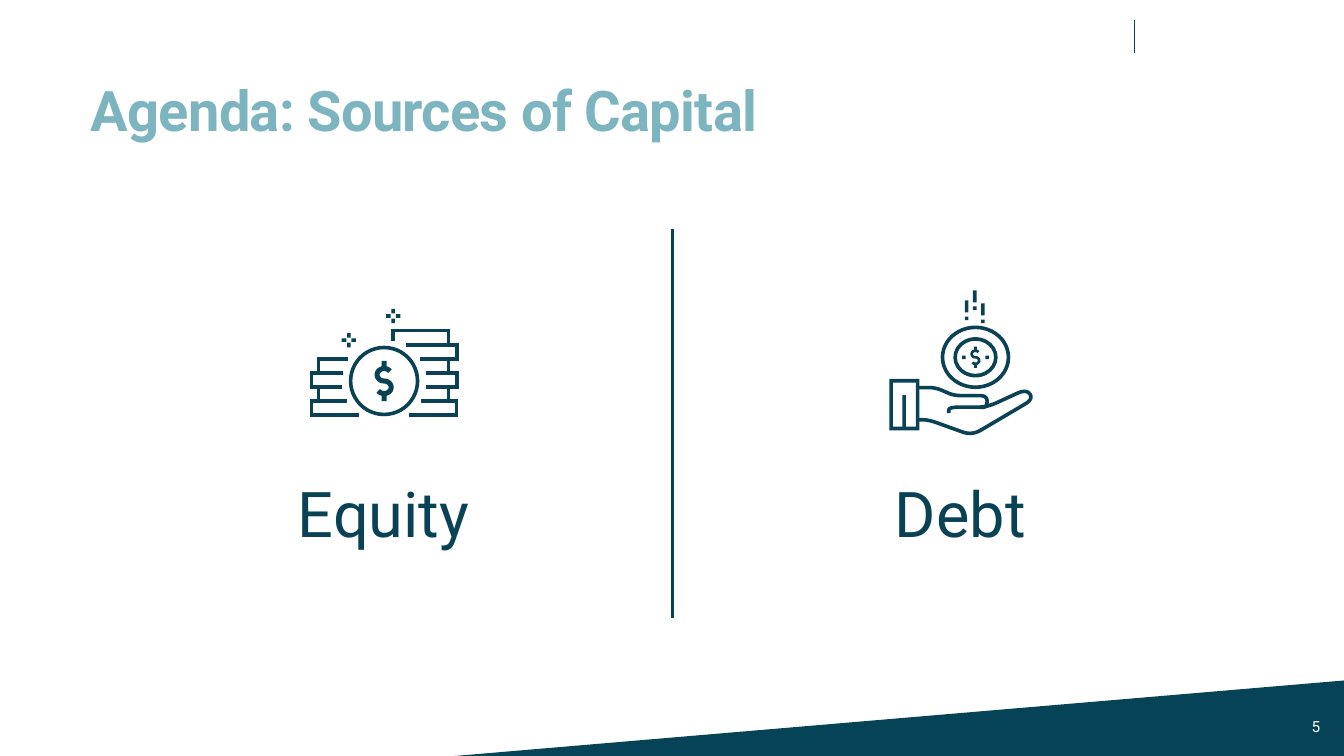
from math import cos, dist, radians, sin, sqrt

from lxml.etree import SubElement
from pptx import Presentation
from pptx.dml.color import RGBColor
from pptx.enum.shapes import MSO_CONNECTOR, MSO_SHAPE
from pptx.enum.text import MSO_ANCHOR, PP_ALIGN
from pptx.oxml.ns import qn
from pptx.util import Inches, Pt

NAVY, INK, TEAL, WHITE = "074356", "094255", "7CB4C0", "FFFFFF"
FONT = "Roboto"
UNIT = 0.01
STROKE = 3.6
CAPTION_HEIGHT = 0.86


def color(value):
    """Turn a hex string into a colour."""
    return RGBColor.from_string(value)


def set_values(target, **values):
    """Set attributes from format values."""
    for name, value in values.items():
        setattr(target, name, value)


def add_preset(page, kind, box, value):
    """Add a flat preset shape in a box given in inches."""
    shape = page.shapes.add_shape(kind, *map(Inches, box))
    shape.shadow.inherit = False
    shape.fill.solid()
    shape.fill.fore_color.rgb = color(value)
    shape.line.fill.background()
    return shape


def add_part(page, origin, box, kind=MSO_SHAPE.RECTANGLE):
    """Add a solid icon part, with its box in icon units."""
    left, top, width, height = (length * UNIT for length in box)
    return add_preset(page, kind, (origin[0] + left, origin[1] + top, width, height), INK)


def add_hollow(page, origin, box, kind):
    """Add a ring or frame as thick as the icon stroke."""
    add_part(page, origin, box, kind).adjustments[0] = STROKE / min(box[2:])


def add_stroke(page, origin, points, width=STROKE):
    """Draw an open line through points in icon units."""
    places = [(Inches(origin[0] + x * UNIT), Inches(origin[1] + y * UNIT)) for x, y in points]
    builder = page.shapes.build_freeform(*places[0], scale=1.0)
    builder.add_line_segments(places[1:], close=False)
    stroke = builder.convert_to_shape()
    stroke.shadow.inherit = False
    stroke.fill.background()
    stroke.line.color.rgb = color(INK)
    stroke.line.width = Inches(width * UNIT)
    SubElement(stroke.line._ln, qn("a:miter"), lim="800000")


def arc(center, radius_x, radius_y, start, end, steps=20):
    """Sample an elliptical arc between two angles in degrees."""
    angles = [radians(start + (end - start) * index / steps) for index in range(steps + 1)]
    return [(center[0] + radius_x * cos(angle), center[1] + radius_y * sin(angle)) for angle in angles]


def blend(start, end, share):
    """Find the point a share of the way from start to end."""
    return tuple(a + (b - a) * share for a, b in zip(start, end))


def round_corners(points, radius, steps=8):
    """Replace each inner corner by a smooth curve."""
    rounded = [points[0]]
    for before, corner, after in zip(points, points[1:], points[2:]):
        entry, leave = (blend(corner, other, min(0.5, radius / dist(corner, other)))
                        for other in (before, after))
        for index in range(steps + 1):
            share = index / steps
            rounded.append(blend(blend(entry, corner, share), blend(corner, leave, share), share))
    return rounded + [points[-1]]


def add_dollar(page, origin, center, height):
    """Draw a dollar sign from two bowls and two ticks."""
    x, y = center
    size = height / 40
    upper_bowl = arc((x, y - 6.2 * size), 7 * size, 6.2 * size, -35, -270)
    lower_bowl = arc((x, y + 6.2 * size), 7 * size, 6.2 * size, -90, 145)
    add_stroke(page, origin, upper_bowl + lower_bowl[1:], 5 * size)
    for top in (y - 20 * size, y + 12.5 * size):
        add_part(page, origin, (x - 2.5 * size, top, 5 * size, 7.5 * size))


def add_sparkle(page, origin, center):
    """Place four short arms around a centre."""
    length, reach = 4.6, 4.8
    for across, down in ((1, 0), (-1, 0), (0, 1), (0, -1)):
        width, height = (length, STROKE) if across else (STROKE, length)
        left = center[0] + across * reach - width / 2
        top = center[1] + down * reach - height / 2
        add_part(page, origin, (left, top, width, height))


def add_coin_stack(page, origin, side, edges, first_line, coin, clearance):
    """Stack coins whose lines stop at a clearance around the front coin."""
    pitch = 14

    def line_end(y):
        """Find where a line at this height stops."""
        return coin[0] + side * sqrt(max(0, clearance ** 2 - (y - coin[1]) ** 2))

    for index, edge in enumerate(edges):
        top = first_line + index * pitch
        bottom = top + pitch
        start = [(line_end(top), top)]
        if abs(top - coin[1]) > clearance:
            start = [(83, top + 10), (83, top)]
        add_stroke(page, origin, start + [(edge, top), (edge, bottom), (line_end(bottom), bottom)])


def add_coins_icon(page, origin):
    """Draw coin stacks behind a dollar coin."""
    coin, radius, clearance = (74, 72), 35, 42
    ring = (coin[0] - radius, coin[1] - radius, 2 * radius, 2 * radius)
    add_hollow(page, origin, ring, MSO_SHAPE.DONUT)
    add_dollar(page, origin, coin, 40)
    add_coin_stack(page, origin, 1, [138, 146] * 3, 22, coin, clearance)
    add_coin_stack(page, origin, -1, [9, 2] * 2, 50, coin, clearance)
    for center in ((83, 7.5), (39, 31.5)):
        add_sparkle(page, origin, center)


def add_hand_icon(page, origin):
    """Draw a hand catching a falling coin."""
    thumb = [(28, 96.5), (46, 96.5), (64, 104.5), (97, 104.5), (97, 116), (90, 116)]
    palm_edge = [(28, 128.5), (39, 128.5), (82, 144)]
    fingertip = [(143, 108), (136, 98)]
    inner_edge = [(97, 116), (59, 116), (59, 122)]
    add_stroke(page, origin, round_corners(thumb, 7))
    add_stroke(page, origin, round_corners(palm_edge + fingertip + inner_edge, 10))
    add_hollow(page, origin, (0, 88, 30, 51), MSO_SHAPE.FRAME)
    add_part(page, origin, (13, 104, STROKE, 32))
    coin = (85.5, 66.5)
    for width, height in ((69, 63), (44, 40)):
        ring = (coin[0] - width / 2, coin[1] - height / 2, width, height)
        add_hollow(page, origin, ring, MSO_SHAPE.DONUT)
    add_dollar(page, origin, coin, 21)
    for side in (-1, 1):
        add_part(page, origin, (coin[0] + side * 11.5 - STROKE / 2, coin[1] - STROKE / 2, STROKE, STROKE))
    for column, top in enumerate((10, 0, 13)):
        for offset, height in ((0, 12), (16, STROKE)):
            add_part(page, origin, (75 + column * 8, top + offset, STROKE, height))


def write(frame, text, size, value, **paragraph_format):
    """Write one formatted paragraph into a text frame."""
    frame.word_wrap = True
    para = frame.paragraphs[0]
    set_values(para, **paragraph_format)
    span = para.add_run()
    span.text = text
    set_values(span.font, name=FONT, size=Pt(size))
    span.font.color.rgb = color(value)
    return span


def add_rule(page, x, top, bottom, width):
    """Draw a vertical rule."""
    rule = page.shapes.add_connector(MSO_CONNECTOR.STRAIGHT, *map(Inches, (x, top, x, bottom)))
    rule.line.color.rgb = color(NAVY)
    rule.line.width = Pt(width)
    SubElement(rule._element.spPr, qn("a:effectLst"))


def add_page_frame(page, number):
    """Place the footer wedge, the header rule and the page number."""
    wedge = add_preset(page, MSO_SHAPE.RIGHT_TRIANGLE, (4.51, 6.75, 8.83, 0.75), NAVY)
    wedge._element.spPr.xfrm.set("flipH", "1")
    add_rule(page, 11.25, 0.2, 0.53, 1)
    box = page.shapes.add_textbox(*map(Inches, (12.91, 7.01, 0.42, 0.4)))
    box.text_frame.vertical_anchor = MSO_ANCHOR.MIDDLE
    write(box.text_frame, number, 11, WHITE)


def add_title(page, text, box):
    """Move and format the title placeholder."""
    title = page.shapes.title
    set_values(title, **dict(zip(("left", "top", "width", "height"), map(Inches, box))))
    title.text_frame.vertical_anchor = MSO_ANCHOR.BOTTOM
    span = write(title.text_frame, text, 40, TEAL, alignment=PP_ALIGN.LEFT, line_spacing=0.85)
    span.font.bold = True
    span.font._element.set("spc", "-50")


def add_source(page, box, label, draw_icon, icon_offset):
    """Place one source of capital: an icon above its label."""
    left, top, width, height = box
    draw_icon(page, (left + icon_offset[0], top + icon_offset[1]))
    caption_box = (left, top + height - CAPTION_HEIGHT, width, CAPTION_HEIGHT)
    caption = page.shapes.add_textbox(*map(Inches, caption_box))
    write(caption.text_frame, label, 45, INK, alignment=PP_ALIGN.CENTER)


def main():
    """Build the agenda slide."""
    deck = Presentation()
    set_values(deck, slide_width=Inches(13.33), slide_height=Inches(7.5))
    page = deck.slides.add_slide(deck.slide_layouts[5])
    add_page_frame(page, "5")
    add_title(page, "Agenda: Sources of Capital", (0.8, 0.56, 11.15, 0.91))
    add_rule(page, 6.67, 2.27, 6.13, 1.5)
    add_source(page, (1.69, 2.88, 4.23, 2.64), "Equity", add_coins_icon, (1.38, 0.18))
    add_source(page, (7.41, 2.88, 4.23, 2.64), "Debt", add_hand_icon, (1.41, 0))
    deck.save("out.pptx")


if __name__ == "__main__":
    main()
